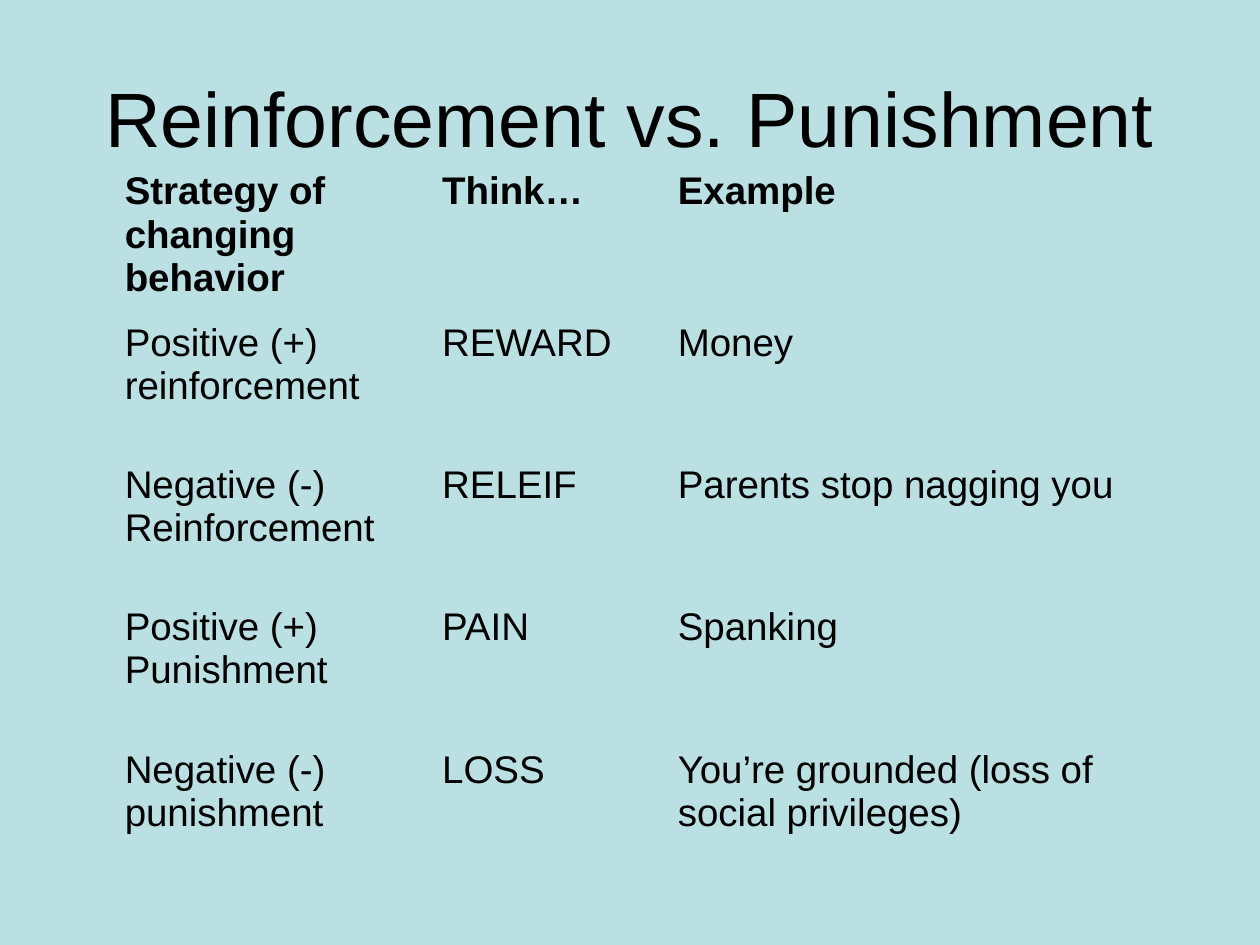
from pptx import Presentation
from pptx.dml.color import RGBColor
from pptx.enum.text import MSO_ANCHOR as Anchor, PP_ALIGN as Align
from pptx.util import Inches, Pt

BLACK = RGBColor(0x00, 0x00, 0x00)
PALE_TEAL = RGBColor(0xBB, 0xE0, 0xE3)

ROWS = [
    ("Strategy of changing behavior", "Think…", "Example"),
    ("Positive (+) reinforcement", "REWARD", "Money"),
    ("Negative (-)\nReinforcement", "RELEIF", "Parents stop nagging you"),
    ("Positive (+)\nPunishment", "PAIN", "Spanking"),
    ("Negative (-) punishment", "LOSS", "You’re grounded (loss of social privileges)"),
]
COLUMN_WIDTHS = (2.52, 1.87, 4.08)
ROW_HEIGHT = 1.13


class SlideBuilder:
    """Holds the slide and its text style, and adds elements to it."""

    font = "Arial"
    color = BLACK

    def __init__(self, slide):
        self.slide = slide

    def background(self, color):
        fill = self.slide.background.fill
        fill.solid()
        fill.fore_color.rgb = color

    def format_text(self, tf, size, bold=False, align=Align.LEFT):
        for p in tf.paragraphs:
            p.alignment = align
            for r in p.runs:
                r.font.name = self.font
                r.font.size = Pt(size)
                r.font.bold = bold
                r.font.color.rgb = self.color

    def title(self, text, left, top, width, height):
        box = self.slide.shapes.add_textbox(
            Inches(left), Inches(top), Inches(width), Inches(height))
        tf = box.text_frame
        tf.word_wrap = True
        tf.vertical_anchor = Anchor.MIDDLE
        tf.text = text
        self.format_text(tf, 44, align=Align.CENTER)

    def table(self, rows, widths, row_height, left, top):
        frame = self.slide.shapes.add_table(
            len(rows), len(widths), Inches(left), Inches(top),
            Inches(sum(widths)), Inches(row_height * len(rows)))
        table = frame.table
        table.horz_banding = False
        for column, width in zip(table.columns, widths):
            column.width = Inches(width)
        for i, texts in enumerate(rows):
            table.rows[i].height = Inches(row_height)
            for cell, text in zip(table.rows[i].cells, texts):
                cell.fill.background()
                cell.text_frame.text = text
                self.format_text(cell.text_frame, 22, bold=i == 0)
        self.clear_style(table)

    def clear_style(self, table):
        style_id = table._tbl.tblPr.find("{*}tableStyleId")
        style_id.text = "{2D5ABB26-0587-4C30-8999-92F81FD0307C}"


def main():
    prs = Presentation()
    prs.slide_width, prs.slide_height = Inches(10), Inches(7.5)
    s = SlideBuilder(prs.slides.add_slide(prs.slide_layouts[6]))
    s.background(PALE_TEAL)
    s.title("Reinforcement vs. Punishment", 0.5, 0.3, 9, 1.25)
    s.table(ROWS, COLUMN_WIDTHS, ROW_HEIGHT, 0.89, 1.3)
    prs.save("out.pptx")


if __name__ == "__main__":
    main()
